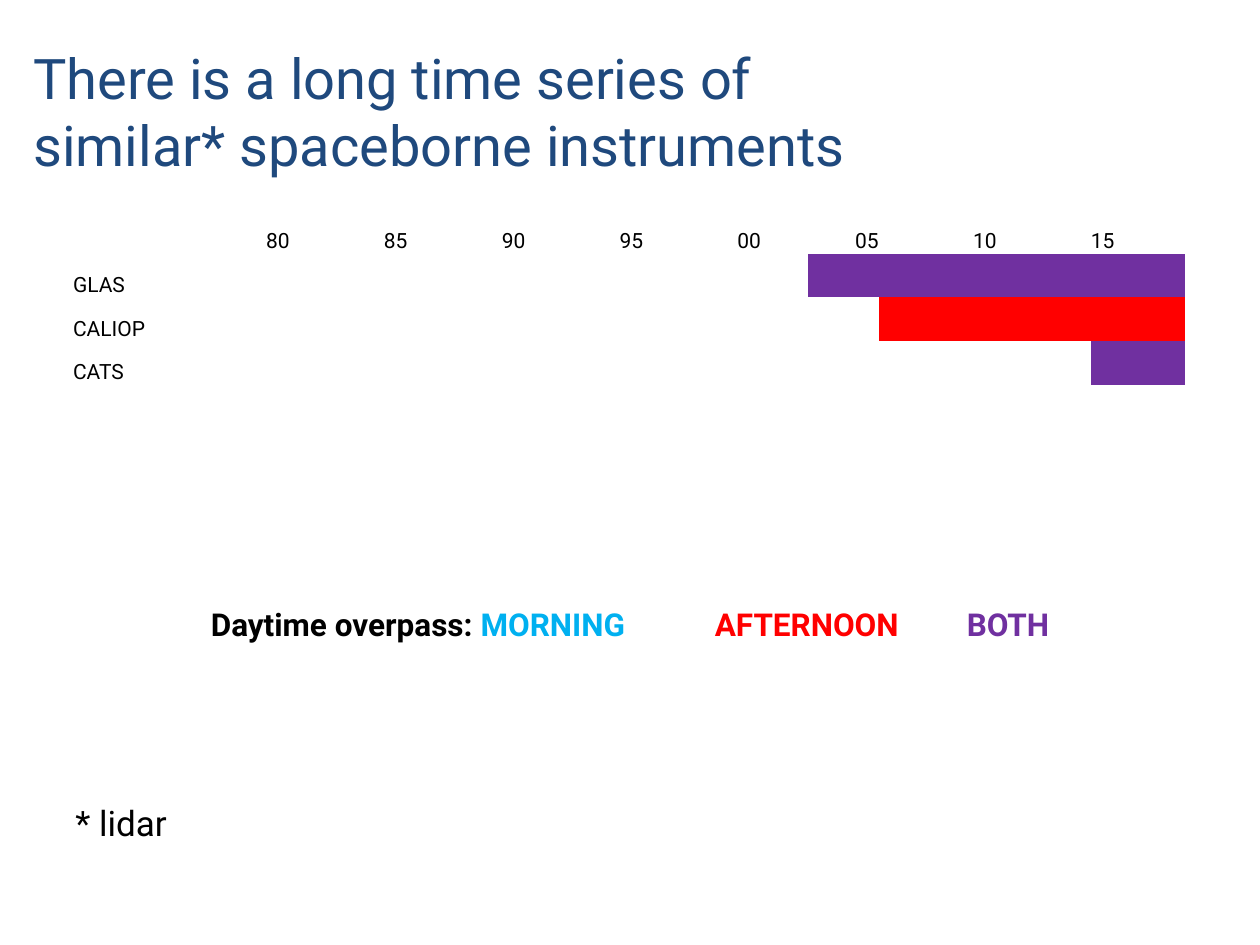
from typing import NamedTuple

from lxml.etree import SubElement
from pptx import Presentation
from pptx.dml.color import RGBColor
from pptx.enum.text import MSO_ANCHOR as Anchor, PP_ALIGN as Align
from pptx.oxml.ns import qn
from pptx.util import Pt

PX = 914400 // 126
FONT = "Roboto"
BLACK, NAVY, BLUE, RED, PURPLE = "000000", "1F497D", "00B0F0", "FF0000", "7030A0"
PLAIN_STYLE = "{2D5ABB26-0587-4C30-8999-92F81FD0307C}"
FIRST_YEAR, LAST_YEAR = 1978, 2018
YEARS = LAST_YEAR - FIRST_YEAR + 1


class Box(NamedTuple):
    """Place and size in px."""
    left: int
    top: int
    width: int
    height: int

    def emu(self) -> list[int]:
        """Return the four lengths in EMU."""
        return [length * PX for length in self]


class Words(NamedTuple):
    """One run of text with its colour."""
    text: str
    color: str = BLACK


class Instrument(NamedTuple):
    """A spaceborne instrument, its first year and overpass colour."""
    name: str
    start: int
    color: str


INSTRUMENTS = [
    Instrument("GLAS", 2003, PURPLE),
    Instrument("CALIOP", 2006, RED),
    Instrument("CATS", 2015, PURPLE),
]
OVERPASSES = [
    Words("Daytime overpass:"),
    Words(" MORNING\t", BLUE),
    Words("AFTERNOON\t", RED),
    Words("BOTH", PURPLE),
]


def rgb(color: str) -> RGBColor:
    """Turn a hex string into a colour."""
    return RGBColor.from_string(color)


def add_words(paragraph, words: Words, size: int, bold: bool = False) -> None:
    """Add one formatted run to a paragraph."""
    run = paragraph.add_run()
    run.text = words.text
    run.font.name, run.font.size, run.font.bold = FONT, Pt(size), bold
    run.font.color.rgb = rgb(words.color)


def set_tabs(paragraph, stops: tuple[int, ...]) -> None:
    """Give a paragraph left tab stops, in px."""
    tabs = SubElement(paragraph._p.get_or_add_pPr(), qn("a:tabLst"))
    for stop in stops:
        SubElement(tabs, qn("a:tab"), pos=str(stop * PX), algn="l")


def add_text(slide, box: Box, lines: list[list[Words]], size: int, bold: bool = False,
             align: Align = Align.LEFT, anchor: Anchor = Anchor.TOP,
             tabs: tuple[int, ...] = ()) -> None:
    """Add a text box whose lines form one paragraph."""
    frame = slide.shapes.add_textbox(*box.emu()).text_frame
    frame.word_wrap, frame.vertical_anchor = True, anchor
    paragraph = frame.paragraphs[0]
    paragraph.alignment = align
    if tabs:
        set_tabs(paragraph, tabs)
    for number, line in enumerate(lines):
        if number:
            paragraph.add_line_break()
        for words in line:
            add_words(paragraph, words, size, bold)


def year_column(year: int) -> int:
    """Return the table column of a year."""
    return year - FIRST_YEAR + 1


def add_timeline(slide, box: Box, name_width: int) -> None:
    """Add the table of years with one coloured row per instrument."""
    table = slide.shapes.add_table(len(INSTRUMENTS) + 1, YEARS + 1, *box.emu()).table
    table.first_row = table.horz_banding = False
    table._tbl.tblPr[0].text = PLAIN_STYLE
    for column in table.columns:
        column.width = (box.width - name_width) * PX // YEARS
    table.columns[0].width = name_width * PX
    for cell in table.iter_cells():
        cell.margin_left = cell.margin_right = cell.margin_top = cell.margin_bottom = 0
        cell.vertical_anchor = Anchor.BOTTOM
        cell.fill.background()

    def label(row: int, column: int, text: str) -> None:
        """Write a label into a cell."""
        add_words(table.cell(row, column).text_frame.paragraphs[0], Words(text), 12)

    for year in range(1980, LAST_YEAR, 5):
        label(0, year_column(year), f"{year % 100:02}")
    for row, instrument in enumerate(INSTRUMENTS, 1):
        label(row, 0, instrument.name)
        for year in range(instrument.start, LAST_YEAR + 1):
            fill = table.cell(row, year_column(year)).fill
            fill.solid()
            fill.fore_color.rgb = rgb(instrument.color)


def main() -> None:
    """Build and save the slide."""
    deck = Presentation()
    deck.slide_width, deck.slide_height = 1260 * PX, 945 * PX
    slide = deck.slides.add_slide(deck.slide_layouts[6])
    add_timeline(slide, Box(73, 210, 1114, 175), 146)
    add_text(slide, Box(21, 32, 1239, 157),
             [[Words("There is a long time series of", NAVY)],
              [Words("similar* spaceborne instruments", NAVY)]], 32, anchor=Anchor.MIDDLE)
    add_text(slide, Box(63, 795, 1113, 55), [[Words("* lidar")]], 20)
    add_text(slide, Box(0, 599, 1260, 50), [OVERPASSES], 18, bold=True,
             align=Align.CENTER, tabs=(504, 756))
    deck.save("out.pptx")


if __name__ == "__main__":
    main()
